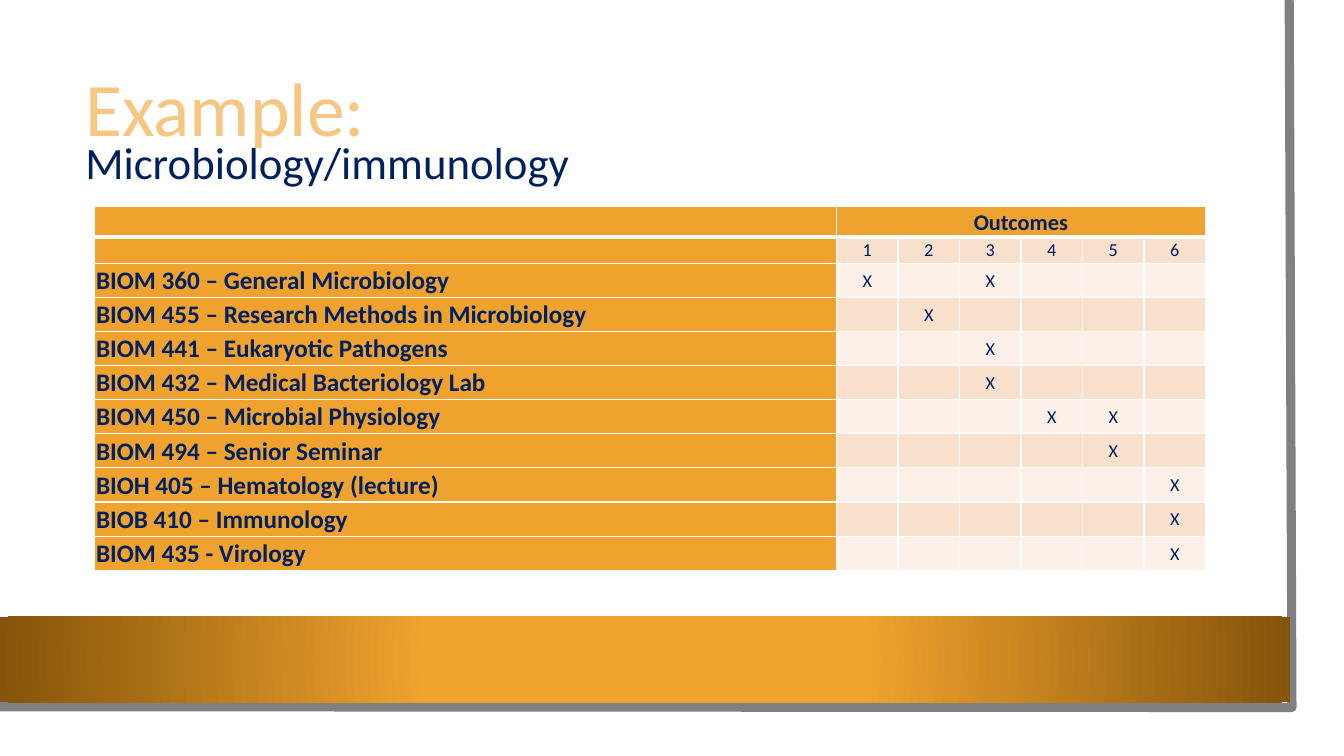
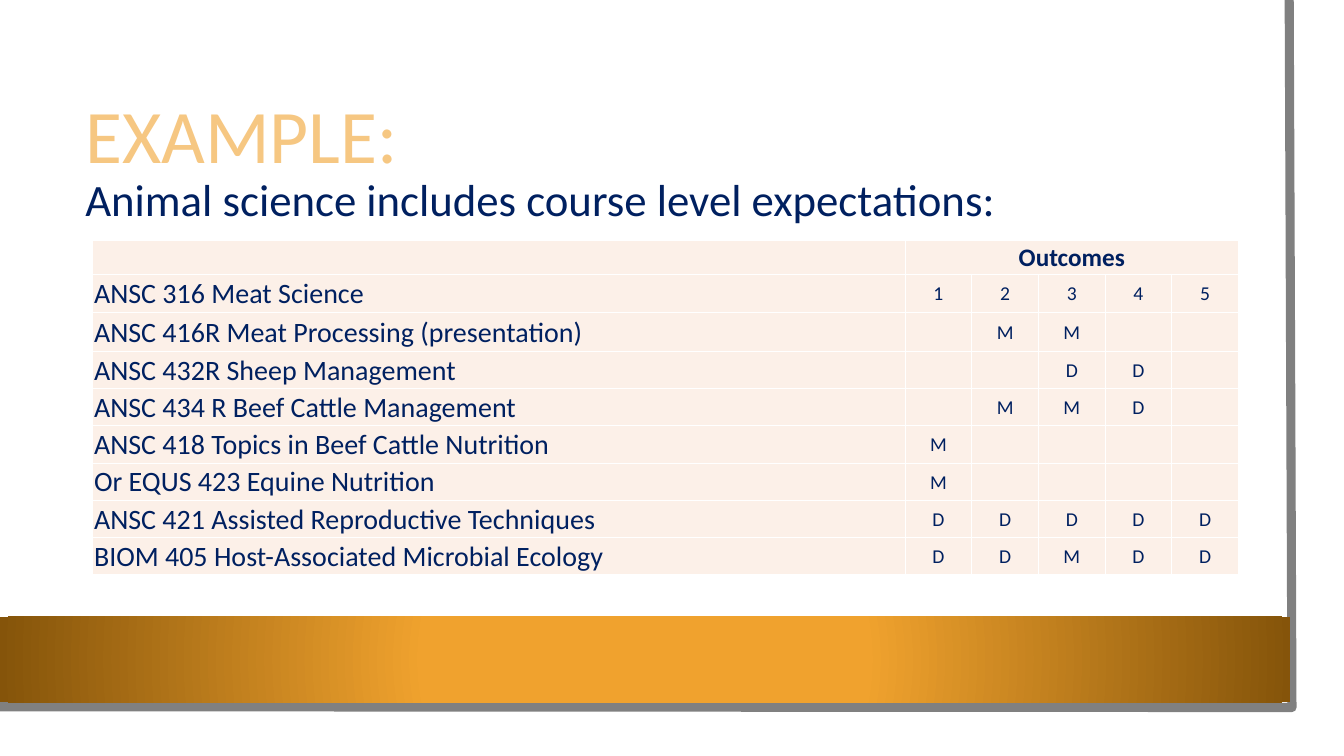
import lxml.etree
import pptx
import pptx.dml.color
import pptx.enum.shapes
import pptx.enum.text
import pptx.oxml.ns
import pptx.util

Cm, Pt = pptx.util.Cm, pptx.util.Pt
RGB = pptx.dml.color.RGBColor
ALIGN = pptx.enum.text.PP_ALIGN
ANCHOR = pptx.enum.text.MSO_ANCHOR
qn = pptx.oxml.ns.qn

FONT = "Calibri"
NAVY = RGB(0x00, 0x20, 0x60)
PALE_GOLD = RGB(0xF6, 0xC7, 0x82)
GOLD = RGB(0xF0, 0xA2, 0x2E)
BROWN = RGB(0x85, 0x54, 0x0A)
GREY = RGB(0x80, 0x80, 0x80)
PEACH = RGB(0xF9, 0xE0, 0xCD)
CREAM = RGB(0xFC, 0xF0, 0xE8)

TEXT_LEFT, TEXT_WIDTH = Cm(1.9), Cm(28.88)
TITLE_HEIGHT, SUBTITLE_HEIGHT = Cm(3.2), Cm(1.63)

# Each course row holds its label and one mark per outcome; "-" is no mark.
SLIDES = [
    {
        "title": "Example:", "title_top": 1.22,
        "subtitle": "Microbiology/immunology", "subtitle_top": 3.28,
        "left": 2.39, "top": 5.21, "columns": (18.69, 1.55),
        "heights": [0.76, 0.66] + [0.86] * 9,
        "sizes": {"header": 16, "course": 18, "mark": 13},
        "bold_courses": True, "header_rule": 3,
        "label_fill": GOLD, "bands": (CREAM, PEACH),
        "rows": [
            ("", "123456"),
            ("BIOM 360 – General Microbiology", "X-X---"),
            ("BIOM 455 – Research Methods in Microbiology", "-X----"),
            ("BIOM 441 – Eukaryotic Pathogens", "--X---"),
            ("BIOM 432 – Medical Bacteriology Lab", "--X---"),
            ("BIOM 450 – Microbial Physiology", "---XX-"),
            ("BIOM 494 – Senior Seminar", "----X-"),
            ("BIOH 405 – Hematology (lecture)", "-----X"),
            ("BIOB 410 – Immunology", "-----X"),
            ("BIOM 435 - Virology", "-----X"),
        ],
    },
    {
        "title": "EXAMPLE:", "title_top": 1.9,
        "subtitle": "Animal science includes course level expectations:",
        "subtitle_top": 4.19,
        "left": 2.34, "top": 6.07, "columns": (20.47, 1.68),
        "heights": [0.84] + [0.97] * 2 + [0.94] * 6,
        "sizes": {"header": 18, "course": 20, "mark": 14},
        "bold_courses": False, "header_rule": 1,
        "label_fill": CREAM, "bands": (CREAM, CREAM),
        "rows": [
            ("ANSC 316 Meat Science", "12345"),
            ("ANSC 416R Meat Processing (presentation)", "-MM--"),
            ("ANSC 432R Sheep Management", "--DD-"),
            ("ANSC 434 R Beef Cattle Management", "-MMD-"),
            ("ANSC 418 Topics in Beef Cattle Nutrition", "M----"),
            ("Or EQUS 423 Equine Nutrition", "M----"),
            ("ANSC 421 Assisted Reproductive Techniques", "DDDDD"),
            ("BIOM 405 Host-Associated Microbial Ecology", "DDMDD"),
        ],
    },
]


def put_text(frame, text, size, color=NAVY, bold=False, align=ALIGN.LEFT, spacing=None):
    frame.word_wrap = True
    paragraph = frame.paragraphs[0]
    paragraph.alignment = align
    paragraph.line_spacing = spacing
    if not text:
        # The end mark's size keeps an empty cell from growing its row.
        lxml.etree.SubElement(paragraph._p, qn("a:endParaRPr"), sz=str(size * 100))
        return
    run = paragraph.add_run()
    run.text = text
    run.font.name = FONT
    run.font.size = Pt(size)
    run.font.bold = bold
    run.font.color.rgb = color


def add_frame(slide, layout):
    """Draws the band and the grey edge, then moves them to the layout."""
    builder = slide.shapes.build_freeform(Cm(32.49), 0)
    builder.add_line_segments([(Cm(32.56), Cm(17.83)), (0, Cm(17.81))], close=False)
    edge = builder.convert_to_shape()
    edge.fill.background()
    edge.line.color.rgb = GREY
    edge.line.width = Pt(6.5)

    band = slide.shapes.add_shape(
        pptx.enum.shapes.MSO_SHAPE.RECTANGLE, 0, Cm(15.54), Cm(32.51), Cm(2.16))
    band.line.fill.background()
    band.fill.gradient()
    for stop, position, color in zip(band.fill.gradient_stops, (0.34, 1), (GOLD, BROWN)):
        stop.position = position
        stop.color.rgb = color
    gradient = band.element.spPr.find(qn("a:gradFill"))
    gradient.remove(gradient.find(qn("a:lin")))
    circle = lxml.etree.SubElement(gradient, qn("a:path"), {"path": "circle"})
    lxml.etree.SubElement(circle, qn("a:fillToRect"), dict.fromkeys("ltrb", "50000"))

    for place, part in enumerate((edge, band), start=2):
        part.shadow.inherit = False
        layout.shapes.element.insert(place, part.element)


def add_borders(cell, bottom):
    properties = cell._tc.get_or_add_tcPr()
    for side, points in (("L", 1), ("R", 1), ("T", 1), ("B", bottom)):
        line = lxml.etree.SubElement(
            properties, qn("a:ln" + side), w=str(Pt(points)))
        fill = lxml.etree.SubElement(line, qn("a:solidFill"))
        lxml.etree.SubElement(fill, qn("a:srgbClr"), val="FFFFFF")


def add_outcomes(slide, content):
    rows = content["rows"]
    outcomes = len(rows[0][1])
    label_width, mark_width = content["columns"]
    widths = [label_width] + [mark_width] * outcomes
    heights = content["heights"]
    table = slide.shapes.add_table(
        len(heights), len(widths), Cm(content["left"]), Cm(content["top"]),
        Cm(sum(widths)), Cm(sum(heights))).table
    table.first_row = table.horz_banding = False
    for column, width in zip(table.columns, widths):
        column.width = Cm(width)
    for row, height in zip(table.rows, heights):
        row.height = Cm(height)

    header = ["", "Outcomes"] + [""] * (outcomes - 1)
    grid = [header] + [[course, *marks.replace("-", " ")] for course, marks in rows]
    sizes = content["sizes"]
    for r, texts in enumerate(grid):
        for c, text in enumerate(texts):
            cell = table.cell(r, c)
            is_header, is_course = r == 0, c == 0
            kind = "header" if is_header else "course" if is_course and text else "mark"
            cell.margin_left = cell.margin_right = cell.margin_top = Cm(0.03)
            cell.margin_bottom = 0
            cell.vertical_anchor = ANCHOR.MIDDLE
            add_borders(cell, content["header_rule"] if is_header else 1)
            cell.fill.solid()
            cell.fill.fore_color.rgb = (
                content["label_fill"] if is_header or is_course
                else content["bands"][r % 2])
            put_text(cell.text_frame, text.strip(), sizes[kind],
                     bold=is_header or (is_course and content["bold_courses"]),
                     align=ALIGN.LEFT if is_course else ALIGN.CENTER)
    table.cell(0, 1).merge(table.cell(0, outcomes))


def add_headings(slide, content):
    title = slide.shapes.title
    title.left, title.top = TEXT_LEFT, Cm(content["title_top"])
    title.width, title.height = TEXT_WIDTH, TITLE_HEIGHT
    title.text_frame.auto_size = pptx.enum.text.MSO_AUTO_SIZE.NONE
    title.text_frame.vertical_anchor = ANCHOR.MIDDLE
    put_text(title.text_frame, content["title"], 54, color=PALE_GOLD, spacing=0.9)
    subtitle = slide.shapes.add_textbox(
        TEXT_LEFT, Cm(content["subtitle_top"]), TEXT_WIDTH, SUBTITLE_HEIGHT)
    put_text(subtitle.text_frame, content["subtitle"], 32)


def main():
    deck = pptx.Presentation()
    deck.slide_width, deck.slide_height = Cm(33.87), Cm(19.05)
    layout = deck.slide_layouts.get_by_name("Title Only")
    for number, content in enumerate(SLIDES):
        slide = deck.slides.add_slide(layout)
        if number == 0:
            add_frame(slide, layout)
        add_headings(slide, content)
        add_outcomes(slide, content)
    deck.save("out.pptx")


if __name__ == "__main__":
    main()
